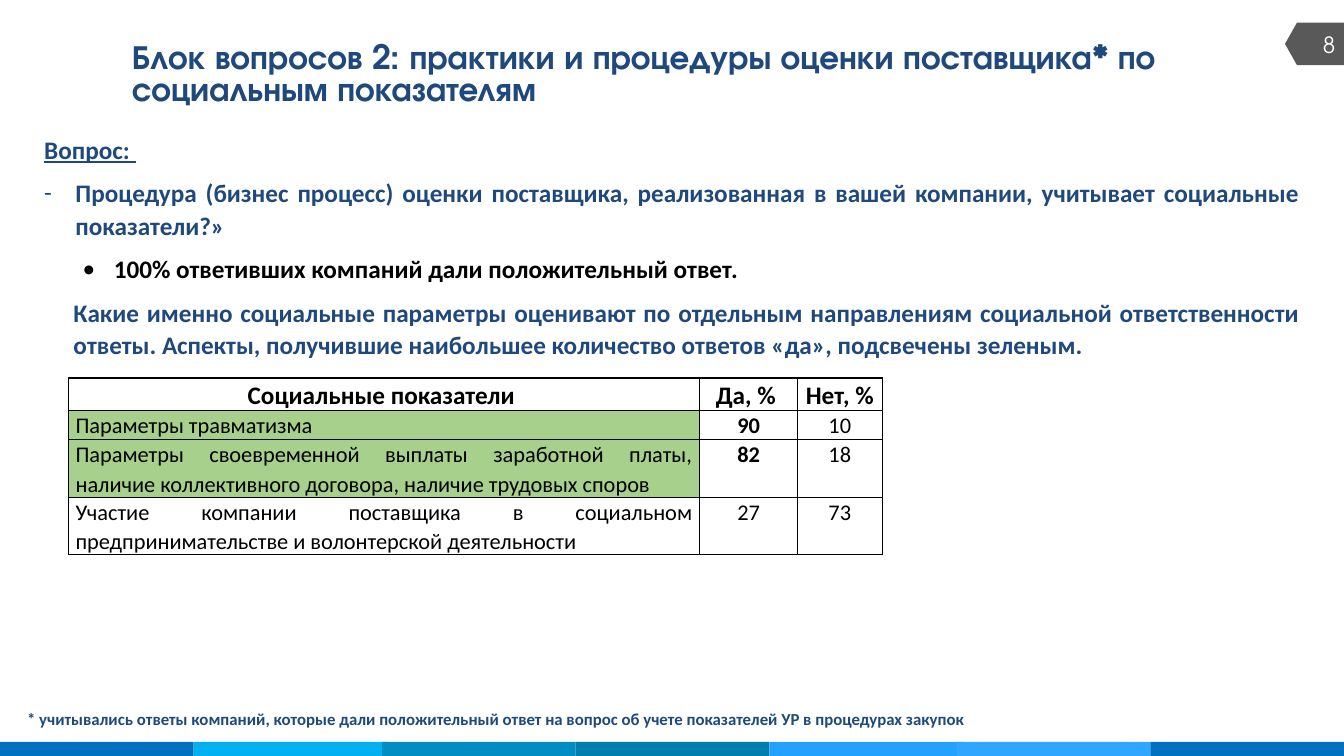
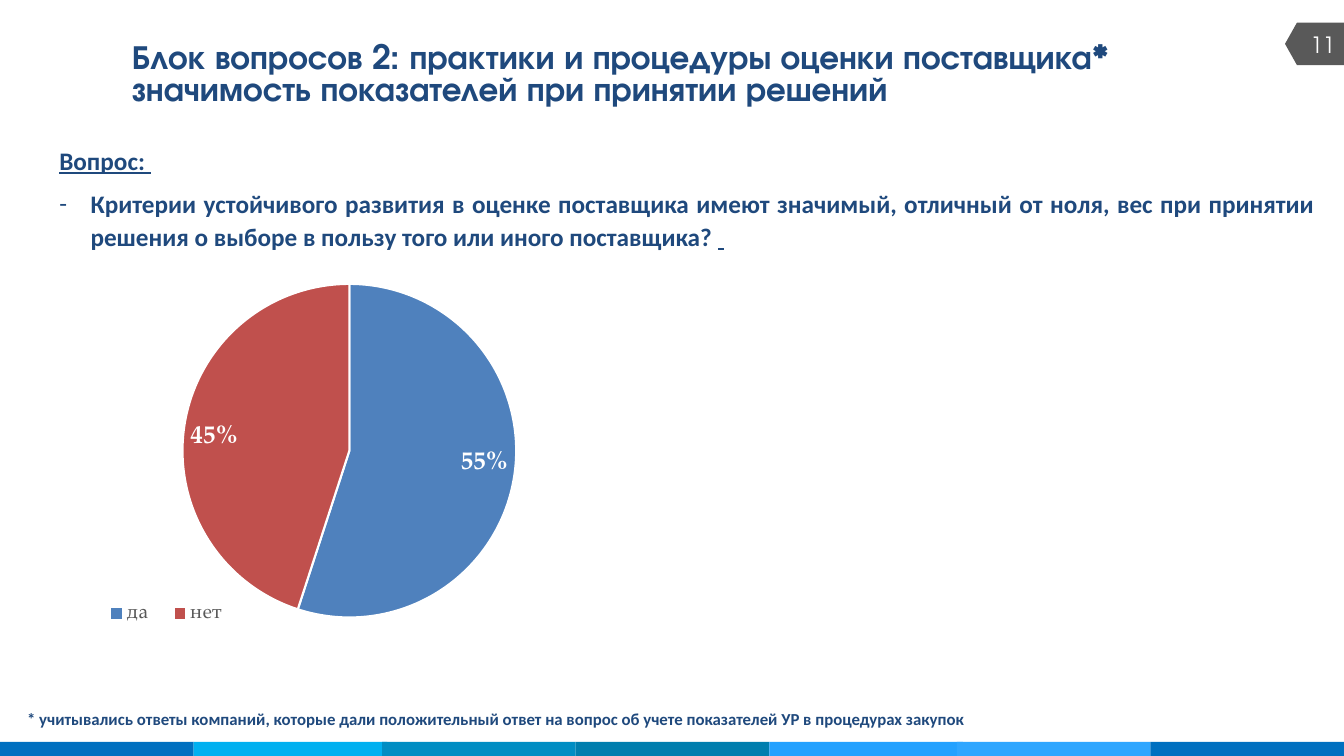
from dataclasses import dataclass

from lxml.etree import SubElement
from pptx import Presentation
from pptx.chart.data import CategoryChartData
from pptx.dml.color import RGBColor
from pptx.enum.chart import XL_CHART_TYPE, XL_LABEL_POSITION, XL_LEGEND_POSITION
from pptx.enum.shapes import MSO_SHAPE
from pptx.enum.text import MSO_ANCHOR, PP_ALIGN
from pptx.oxml.ns import qn
from pptx.slide import Slide
from pptx.util import Inches, Pt

COLORS = {
    "navy": "1F497D",
    "black": "000000",
    "white": "FFFFFF",
    "gray": "595959",
    "green": "A8D08D",
    "pie_blue": "4F81BD",
    "pie_red": "C0504D",
}
BAND_TILES = (
    (0, "0070C0"),
    (1.92, "00B0F0"),
    (3.79, "008DC3"),
    (5.71, "007EAE"),
    (7.63, "23A1FF"),
    (9.49, "2FA6FF"),
    (11.41, "0070C0"),
)
TITLE_FONT = "TeX Gyre Adventor"
BODY_FONT = "Calibri"
CHART_FONT = "TeX Gyre Pagella"
LINE_SPACING = 1.07
FOOTNOTE = (
    "* учитывались ответы компаний, которые дали положительный ответ "
    "на вопрос об учете показателей УР в процедурах закупок"
)


@dataclass(frozen=True)
class Style:
    """Font and paragraph settings of a piece of text."""

    size: float = 18
    font: str = BODY_FONT
    color: str = "navy"
    bold: bool = True
    align: PP_ALIGN = PP_ALIGN.JUSTIFY
    spacing: float = LINE_SPACING
    after: float = 0


@dataclass(frozen=True)
class Line:
    """One paragraph of body text with its indents in inches."""

    text: str
    color: str = "navy"
    underline: bool = False
    margin: float = 0
    hanging: float = 0
    bullet: str = ""
    underlined_tail: str = ""


@dataclass(frozen=True)
class IndicatorRow:
    """One row of the table of social indicators."""

    name: str
    yes: str
    no: str
    height: float
    leading: bool = False


TITLE_STYLE = Style(24, TITLE_FONT, align=PP_ALIGN.LEFT, spacing=0.8)
NUMBER_STYLE = Style(16, TITLE_FONT, "white", False, PP_ALIGN.RIGHT, 1)
FOOTNOTE_STYLE = Style(12, after=8)

QUESTION = Line("Вопрос: ", underline=True)
SOCIAL_LINES = (
    QUESTION,
    Line(
        "Процедура (бизнес процесс) оценки поставщика, реализованная в вашей "
        "компании, учитывает социальные показатели?»",
        margin=0.31, hanging=0.31, bullet="-",
    ),
    Line(
        "100% ответивших компаний дали положительный ответ.",
        color="black", margin=0.69, hanging=0.31, bullet="•",
    ),
    Line(
        "Какие именно социальные параметры оценивают по отдельным направлениям "
        "социальной ответственности ответы. Аспекты, получившие наибольшее "
        "количество ответов «да», подсвечены зеленым.",
        margin=0.29,
    ),
)
WEIGHT_LINES = (
    QUESTION,
    Line(
        "Критерии устойчивого развития в оценке поставщика имеют значимый, "
        "отличный от ноля, вес при принятии решения о выборе в пользу того "
        "или иного поставщика? ",
        margin=0.31, hanging=0.31, bullet="-", underlined_tail=" ",
    ),
)
TABLE_HEADER = ("Социальные показатели ", "Да, % ", "Нет, % ")
TABLE_WIDTHS = (6.26, 0.97, 0.84)
HEADER_HEIGHT = 0.32
INDICATORS = (
    IndicatorRow("Параметры травматизма", "90", "10", 0.29, True),
    IndicatorRow(
        "Параметры своевременной выплаты заработной платы, наличие "
        "коллективного договора, наличие трудовых споров",
        "82", "18", 0.57, True,
    ),
    IndicatorRow(
        "Участие компании поставщика в социальном предпринимательстве "
        "и волонтерской деятельности",
        "27", "73", 0.57,
    ),
)


def rgb(name: str) -> RGBColor:
    """Return the named colour, or the hex string itself, as a colour."""
    return RGBColor.from_string(COLORS.get(name, name))


def set_font(font, style: Style) -> None:
    """Apply the font part of a style."""
    font.name = style.font
    font.size = Pt(style.size)
    font.bold = style.bold
    font.color.rgb = rgb(style.color)


def style_paragraph(paragraph, style: Style) -> None:
    """Apply a style to a paragraph."""
    paragraph.alignment = style.align
    paragraph.line_spacing = style.spacing
    paragraph.space_after = Pt(style.after)
    set_font(paragraph.font, style)


def add_frame(slide: Slide, left: float, top: float, width: float, height: float):
    """Add a wrapping text box and return its text frame."""
    frame = slide.shapes.add_textbox(
        Inches(left), Inches(top), Inches(width), Inches(height)
    ).text_frame
    frame.word_wrap = True
    return frame


def add_label(slide: Slide, text: str, box: tuple, style: Style):
    """Add a text box of one paragraph and return its text frame."""
    frame = add_frame(slide, *box)
    paragraph = frame.paragraphs[0]
    paragraph.text = text
    style_paragraph(paragraph, style)
    return frame


def add_block(slide: Slide, kind: MSO_SHAPE, box: tuple, color: str):
    """Add a filled shape without outline or shadow."""
    shape = slide.shapes.add_shape(kind, *(Inches(length) for length in box))
    shape.shadow.inherit = False
    shape.fill.solid()
    shape.fill.fore_color.rgb = rgb(color)
    shape.line.fill.background()
    return shape


def add_base_slide(presentation, number: str, title: str) -> Slide:
    """Add a slide with the bottom band, page marker, title and footnote."""
    slide = presentation.slides.add_slide(presentation.slide_layouts[6])
    for left, color in BAND_TILES:
        add_block(slide, MSO_SHAPE.RECTANGLE, (left, 7.36, 1.92, 0.14), color)
    marker = add_block(
        slide, MSO_SHAPE.FLOWCHART_OFFPAGE_CONNECTOR, (12.83, 0.14, 0.42, 0.59), "gray"
    )
    marker.rotation = 90
    frame = add_label(slide, number, (12.75, 0.24, 0.59, 0.4), NUMBER_STYLE)
    frame.vertical_anchor = MSO_ANCHOR.MIDDLE
    add_label(slide, title, (1.21, 0.38, 10.92, 0.52), TITLE_STYLE)
    add_label(slide, FOOTNOTE, (0.17, 6.97, 10.76, 0.31), FOOTNOTE_STYLE)
    return slide


def add_body(slide: Slide, lines: tuple, box: tuple) -> None:
    """Add the question text with its bullets and indents."""
    frame = add_frame(slide, *box)
    for index, line in enumerate(lines):
        paragraph = frame.add_paragraph() if index else frame.paragraphs[0]
        paragraph.text = line.text
        properties = paragraph._p.get_or_add_pPr()
        properties.set("marL", str(Inches(line.margin)))
        properties.set("indent", str(-Inches(line.hanging)))
        if line.bullet:
            SubElement(properties, qn("a:buFont")).set("typeface", BODY_FONT)
            SubElement(properties, qn("a:buChar")).set("char", line.bullet)
        style_paragraph(paragraph, Style(color=line.color, after=8))
        if line.underline:
            paragraph.font.underline = True
        if line.underlined_tail:
            tail = paragraph.add_run()
            tail.text = line.underlined_tail
            tail.font.underline = True


def fill_cell(cell, text: str, style: Style, fill: str = "") -> None:
    """Write a table cell with its fill and thin black borders."""
    cell.margin_left = cell.margin_right = Inches(0.07)
    cell.margin_top = cell.margin_bottom = 0
    paragraph = cell.text_frame.paragraphs[0]
    paragraph.text = text
    style_paragraph(paragraph, style)
    properties = cell._tc.get_or_add_tcPr()
    for side in ("lnL", "lnR", "lnT", "lnB"):
        border = SubElement(properties, qn(f"a:{side}"), w=str(Pt(1)))
        solid = SubElement(border, qn("a:solidFill"))
        SubElement(solid, qn("a:srgbClr"), val=COLORS["black"])
    if fill:
        cell.fill.solid()
        cell.fill.fore_color.rgb = rgb(fill)
    else:
        cell.fill.background()


def add_indicator_table(slide: Slide) -> None:
    """Add the table of social indicators with the leading ones in green."""
    heights = (HEADER_HEIGHT, *(row.height for row in INDICATORS))
    table = slide.shapes.add_table(
        len(heights), len(TABLE_WIDTHS), Inches(0.68), Inches(3.75),
        Inches(sum(TABLE_WIDTHS)), Inches(sum(heights)),
    ).table
    table.first_row = table.horz_banding = False
    for column, width in zip(table.columns, TABLE_WIDTHS):
        column.width = Inches(width)
    for table_row, height in zip(table.rows, heights):
        table_row.height = Inches(height)
    header_style = Style(color="black", align=PP_ALIGN.CENTER)
    for column, text in enumerate(TABLE_HEADER):
        fill_cell(table.cell(0, column), text, header_style)
    name_style = Style(16, color="black", bold=False)
    for index, row in enumerate(INDICATORS, start=1):
        yes_style = Style(16, color="black", bold=row.leading, align=PP_ALIGN.CENTER)
        no_style = Style(16, color="black", bold=False, align=PP_ALIGN.CENTER)
        fill_cell(table.cell(index, 0), row.name, name_style, "green" if row.leading else "")
        fill_cell(table.cell(index, 1), row.yes, yes_style)
        fill_cell(table.cell(index, 2), row.no, no_style)


def place_chart_part(layout, inner: bool, box: tuple) -> None:
    """Fix a chart part at fractions of the chart area."""
    manual = SubElement(layout, qn("c:manualLayout"))
    if inner:
        SubElement(manual, qn("c:layoutTarget"), val="inner")
    for name in ("xMode", "yMode"):
        SubElement(manual, qn(f"c:{name}"), val="edge")
    for name, value in zip("xywh", box):
        SubElement(manual, qn(f"c:{name}"), val=str(value))


def add_answer_pie(slide: Slide) -> None:
    """Add the pie chart of yes and no answers."""
    data = CategoryChartData(number_format="0%")
    data.categories = ("да", "нет")
    data.add_series("Series 1", (0.55, 0.45))
    chart = slide.shapes.add_chart(
        XL_CHART_TYPE.PIE, Inches(0.49), Inches(2.66), Inches(5.95), Inches(3.94), data
    ).chart
    chart.has_title = False
    set_font(chart.font, Style(10, CHART_FONT, "black", False))
    chart.has_legend = True
    chart.legend.position = XL_LEGEND_POSITION.BOTTOM
    chart.legend.include_in_layout = False
    set_font(chart.legend.font, Style(14, CHART_FONT, "gray", False))
    plot = chart.plots[0]
    plot.vary_by_categories = True
    for index, color in enumerate(("pie_blue", "pie_red")):
        point_format = plot.series[0].points[index].format
        point_format.fill.solid()
        point_format.fill.fore_color.rgb = rgb(color)
        point_format.line.color.rgb = rgb("white")
        point_format.line.width = Pt(1.5)
    plot.has_data_labels = True
    labels = plot.data_labels
    labels.show_value = True
    labels.show_percentage = False
    labels.number_format = "0%"
    labels.number_format_is_linked = False
    labels.position = XL_LABEL_POSITION.INSIDE_END
    set_font(labels.font, Style(18, CHART_FONT, "white"))
    plot_area = chart._chartSpace.chart.plotArea
    layout = plot_area.find(qn("c:layout"))
    if layout is None:
        layout = SubElement(plot_area, qn("c:layout"))
        plot_area.insert(0, layout)
    place_chart_part(layout, True, (0.22, 0.04, 0.56, 0.84))
    legend = chart.legend._element
    legend_layout = legend.find(qn("c:layout"))
    if legend_layout is None:
        legend_layout = SubElement(legend, qn("c:layout"))
        legend.find(qn("c:legendPos")).addnext(legend_layout)
    place_chart_part(legend_layout, False, (0.07, 0.82, 0.25, 0.1))


def main() -> None:
    """Build both slides and save the presentation."""
    presentation = Presentation()
    presentation.slide_width = Inches(13.33)
    presentation.slide_height = Inches(7.5)
    heading = "Блок вопросов 2: практики и процедуры оценки поставщика*"
    social = add_base_slide(presentation, "8", f"{heading} по социальным показателям")
    add_body(social, SOCIAL_LINES, (0.34, 1.26, 12.65, 2.4))
    add_indicator_table(social)
    weight = add_base_slide(
        presentation, "11", f"{heading} значимость показателей при принятии решений"
    )
    add_body(weight, WEIGHT_LINES, (0.49, 1.37, 12.65, 1.2))
    add_answer_pie(weight)
    presentation.save("out.pptx")


if __name__ == "__main__":
    main()
